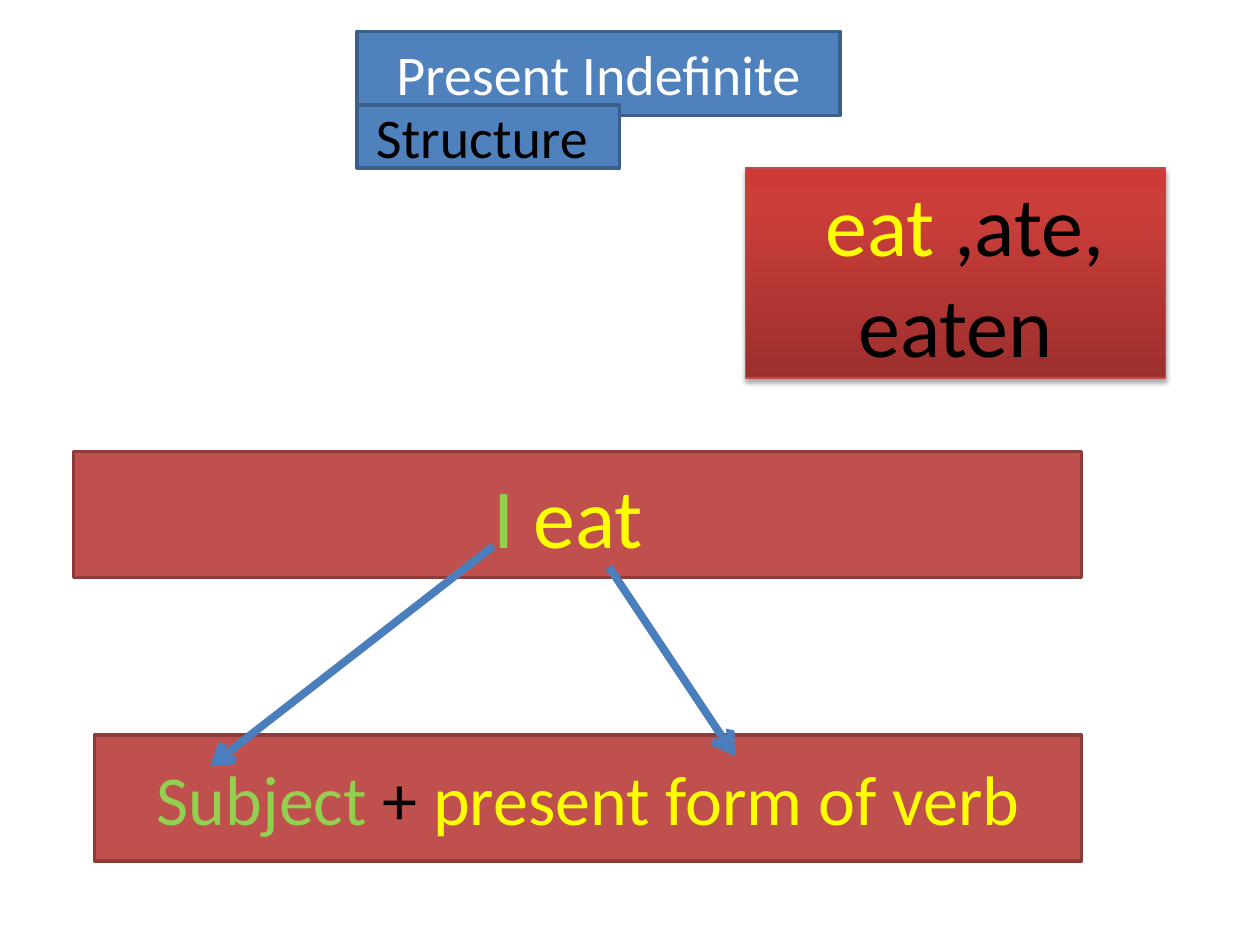
import copy

import pptx
import pptx.dml.color
import pptx.enum.dml
import pptx.enum.shapes
import pptx.enum.text
import pptx.oxml
import pptx.oxml.ns
import pptx.util

RGBColor = pptx.dml.color.RGBColor
BLUE = RGBColor(0x4F, 0x81, 0xBD)
BLUE_EDGE = RGBColor(0x3A, 0x5F, 0x8C)
ARROW_BLUE = RGBColor(0x4B, 0x7E, 0xBC)
RED = RGBColor(0xC0, 0x50, 0x4D)
RED_EDGE = RGBColor(0x8E, 0x3B, 0x39)
FORMS_EDGE = RGBColor(0xBF, 0x4C, 0x48)
FORMS_STOPS = [
    (0, RGBColor(0x9C, 0x2F, 0x2D)),
    (0.8, RGBColor(0xCB, 0x3E, 0x3A)),
    (1, RGBColor(0xCE, 0x3B, 0x37)),
]
WHITE = RGBColor(0xFF, 0xFF, 0xFF)
BLACK = RGBColor(0x00, 0x00, 0x00)
GREEN = RGBColor(0x92, 0xD0, 0x50)
YELLOW = RGBColor(0xFF, 0xFF, 0x00)

FRAME_FORMAT = {
    "word_wrap": True,
    "vertical_anchor": pptx.enum.text.MSO_ANCHOR.MIDDLE,
}
SHADOW_XML = (
    '<a:outerShdw %s blurRad="39400" dist="22900" dir="5400000" rotWithShape="0">'
    '<a:srgbClr val="000000"><a:alpha val="35000"/></a:srgbClr></a:outerShdw>'
    % pptx.oxml.ns.nsdecls("a")
)


def grid(cells):
    """Length of a number of grid cells, twelve to the inch."""
    return pptx.util.Inches(cells / 12)


def set_format(target, values):
    for name, value in values.items():
        setattr(target, name, value)


def add_box(slide, place, edge, edge_width, size, wording, fill=None):
    """Add a rectangle; place is column, row, columns, rows."""
    box = slide.shapes.add_shape(
        pptx.enum.shapes.MSO_SHAPE.RECTANGLE, *map(grid, place))
    box.shadow.inherit = False
    if fill is not None:
        box.fill.solid()
        box.fill.fore_color.rgb = fill
    box.line.color.rgb = edge
    box.line.width = pptx.util.Pt(edge_width)
    set_format(box.text_frame, FRAME_FORMAT)
    paragraph = box.text_frame.paragraphs[0]
    paragraph.alignment = pptx.enum.text.PP_ALIGN.CENTER
    for words, colour in wording:
        run = paragraph.add_run()
        run.text = words
        set_format(run.font, {"name": "Calibri", "size": pptx.util.Pt(size)})
        run.font.color.rgb = colour
    return box


def raise_with_gradient(box, stops):
    """Give a box an upward gradient and a soft shadow below."""
    box.fill.gradient()
    box.fill.gradient_angle = 90
    properties = box.element.spPr
    stop_list = properties.find(".//" + pptx.oxml.ns.qn("a:gsLst"))
    while len(stop_list) < len(stops):
        stop_list.append(copy.deepcopy(stop_list[0]))
    for stop, (position, colour) in zip(box.fill.gradient_stops, stops):
        stop.position = position
        stop.color.rgb = colour
    effects = properties.find(pptx.oxml.ns.qn("a:effectLst"))
    effects.append(pptx.oxml.parse_xml(SHADOW_XML))


def add_arrow(slide, start, end):
    arrow = slide.shapes.add_connector(
        pptx.enum.shapes.MSO_CONNECTOR.STRAIGHT, *map(grid, start + end))
    arrow.line.color.rgb = ARROW_BLUE
    arrow.line.width = pptx.util.Pt(4.5)
    properties = arrow.element.spPr
    namespace = pptx.oxml.ns.nsdecls("a")
    properties.find(pptx.oxml.ns.qn("a:ln")).append(
        pptx.oxml.parse_xml(f'<a:tailEnd {namespace} type="arrow"/>'))
    properties.append(pptx.oxml.parse_xml(f"<a:effectLst {namespace}/>"))


def main():
    deck = pptx.Presentation()
    set_format(deck, {"slide_width": grid(120), "slide_height": grid(90)})
    slide = deck.slides.add_slide(deck.slide_layouts[6])

    add_box(slide, (34, 3, 46, 8), BLUE_EDGE, 2, 32,
            [("Present Indefinite", WHITE)], BLUE)
    add_box(slide, (7, 43, 96, 12), RED_EDGE, 2, 48,
            [("I ", GREEN), ("eat ", YELLOW)], RED)
    add_box(slide, (9, 70, 94, 12), RED_EDGE, 2, 40,
            [("Subject", GREEN), (" + ", BLACK),
             ("present form of verb", YELLOW)], RED)
    verb_forms = add_box(slide, (71, 16, 40, 20), FORMS_EDGE, 0.75, 48,
                         [(" eat ", YELLOW), (",ate, eaten", BLACK)])
    raise_with_gradient(verb_forms, FORMS_STOPS)
    add_box(slide, (34, 10, 25, 6), BLUE_EDGE, 2, 32,
            [("Structure ", BLACK)], BLUE)

    add_arrow(slide, (47, 52), (20, 73))
    add_arrow(slide, (58, 54), (70, 72))

    deck.save("out.pptx")


if __name__ == "__main__":
    main()
